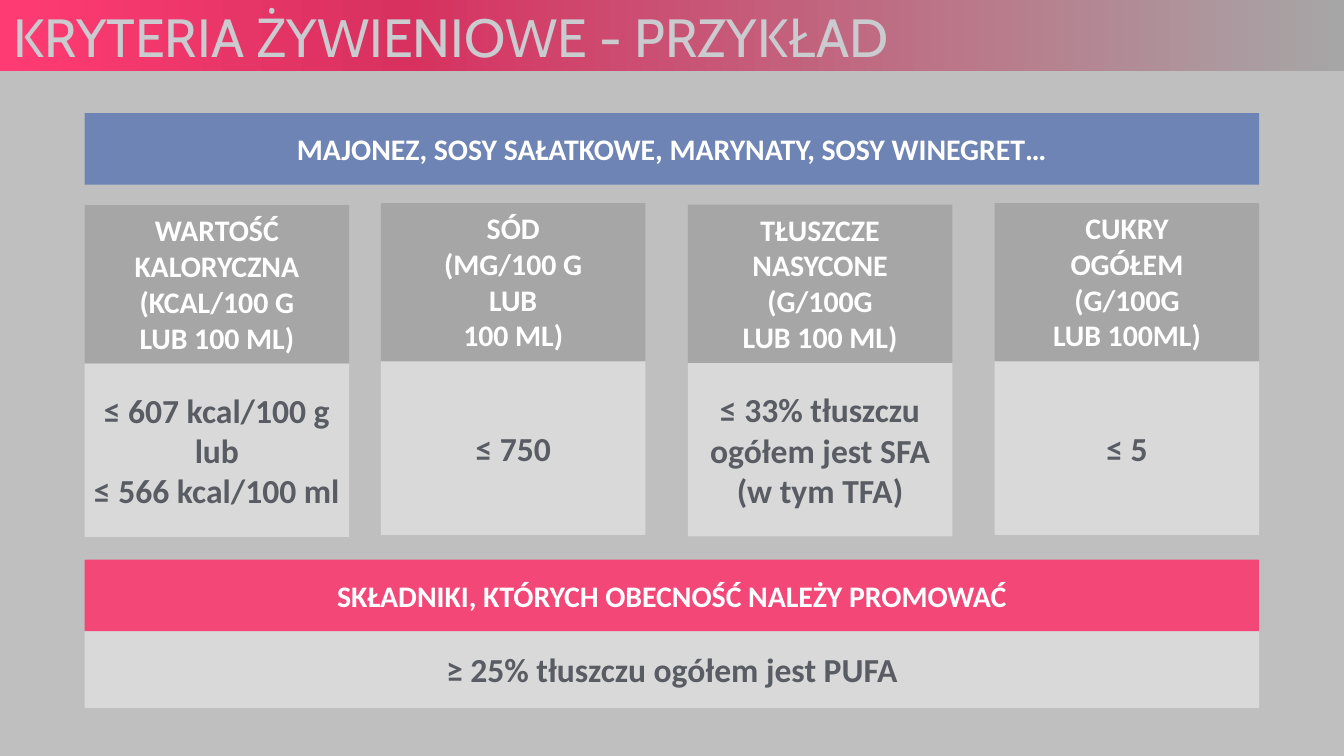
import copy

import pptx
import pptx.dml.color
import pptx.enum.shapes
import pptx.enum.text
import pptx.util

Cm = pptx.util.Cm
RGBColor = pptx.dml.color.RGBColor
Align = pptx.enum.text.PP_ALIGN
Anchor = pptx.enum.text.MSO_ANCHOR

BACKGROUND = RGBColor(0xBF, 0xBF, 0xBF)
GREY = RGBColor(0xA6, 0xA6, 0xA6)
LIGHT_GREY = RGBColor(0xD9, 0xD9, 0xD9)
TITLE_GREY = RGBColor(0xC9, 0xCB, 0xCE)
DARK_GREY = RGBColor(0x59, 0x5D, 0x63)
WHITE = RGBColor(0xFF, 0xFF, 0xFF)
BLUE = RGBColor(0x6E, 0x84, 0xB4)
PINK = RGBColor(0xF3, 0x47, 0x78)
DARK_PINK = RGBColor(0xD8, 0x31, 0x60)
BRIGHT_PINK = RGBColor(0xFF, 0x3B, 0x73)

SLIDE_WIDTH, SLIDE_HEIGHT = Cm(25.4), Cm(14.29)
MARGIN = Cm(1.6)
CONTENT_WIDTH = SLIDE_WIDTH - 2 * MARGIN
BAND_HEIGHT = Cm(1.35)
COLUMN_WIDTH = Cm(5)
HEADER_HEIGHT = Cm(2.99)
COLUMN_HEIGHT = Cm(6.27)

# Left, top, header lines and limit lines of each criterion
CRITERIA = [
    (MARGIN, Cm(3.88),
     ["WARTOŚĆ KALORYCZNA", "(KCAL/100 G", "LUB 100 ML)"],
     ["≤ 607 kcal/100 g", "lub", "≤ 566 kcal/100 ml"]),
    (Cm(7.2), Cm(3.84),
     ["SÓD", "(MG/100 G", "LUB", "100 ML)"],
     ["≤ 750"]),
    (Cm(13), Cm(3.87),
     ["TŁUSZCZE", "NASYCONE", "(G/100G", "LUB 100 ML)"],
     ["≤ 33% tłuszczu", "ogółem jest SFA", "(w tym TFA)"]),
    (Cm(18.8), Cm(3.84),
     ["CUKRY", "OGÓŁEM", "(G/100G", "LUB 100ML)"],
     ["≤ 5"]),
]


def write_text(shape, lines, size=16, color=WHITE, font="Calibri", bold=True,
               align=Align.CENTER, anchor=Anchor.MIDDLE, side_inset=Cm(0.25)):
    """Fill the shape with one paragraph per line."""
    frame = shape.text_frame
    frame.text = "\n".join(lines)
    frame.word_wrap = True
    frame.auto_size = pptx.enum.text.MSO_AUTO_SIZE.NONE
    frame.vertical_anchor = anchor
    frame.margin_left = frame.margin_right = side_inset
    for paragraph in frame.paragraphs:
        paragraph.alignment = align
        paragraph.font.size = pptx.util.Pt(size)
        paragraph.font.name = font
        paragraph.font.bold = bold
        paragraph.font.color.rgb = color


def add_panel(slide, box, fill, lines, **text_format):
    shape = slide.shapes.add_shape(
        pptx.enum.shapes.MSO_SHAPE.RECTANGLE, *box)
    shape.shadow.inherit = False
    shape.fill.solid()
    shape.fill.fore_color.rgb = fill
    shape.line.fill.background()
    write_text(shape, lines, **text_format)


def place_title(slide, box, text):
    title = slide.shapes.title
    title.left, title.top, title.width, title.height = box
    fill = title.fill
    fill.gradient()
    fill.gradient_angle = 180
    first_stop = title._element.spPr.gradFill.gsLst[0]
    first_stop.addnext(copy.deepcopy(first_stop))
    stops = [(0, GREY), (0.7, DARK_PINK), (1, BRIGHT_PINK)]
    for stop, (position, color) in zip(fill.gradient_stops, stops):
        stop.position = position
        stop.color.rgb = color
    write_text(title, [text], size=28.8, color=TITLE_GREY, font="Cabin",
               bold=False, align=Align.LEFT)


def add_criterion(slide, box, header, limit):
    left, top, width, height = box
    add_panel(slide, (left, top + HEADER_HEIGHT, width, height - HEADER_HEIGHT),
              LIGHT_GREY, limit, size=18, color=DARK_GREY, side_inset=Cm(0.1))
    add_panel(slide, (left, top, width, HEADER_HEIGHT), GREY, header,
              anchor=Anchor.TOP)


def add_promoted_ingredients(slide, box, heading, requirement):
    left, top, width, height = box
    add_panel(slide, (left, top + BAND_HEIGHT, width, height - BAND_HEIGHT),
              LIGHT_GREY, [requirement], size=18, color=DARK_GREY)
    add_panel(slide, (left, top, width, BAND_HEIGHT), PINK, [heading])


def main():
    presentation = pptx.Presentation()
    presentation.slide_width = SLIDE_WIDTH
    presentation.slide_height = SLIDE_HEIGHT
    slide = presentation.slides.add_slide(presentation.slide_layouts[5])
    slide.background.fill.solid()
    slide.background.fill.fore_color.rgb = BACKGROUND

    place_title(slide, (0, 0, SLIDE_WIDTH, BAND_HEIGHT),
                "KRYTERIA ŻYWIENIOWE - PRZYKŁAD")
    for left, top, header, limit in CRITERIA:
        add_criterion(slide, (left, top, COLUMN_WIDTH, COLUMN_HEIGHT),
                      header, limit)
    add_promoted_ingredients(
        slide, (MARGIN, Cm(10.58), CONTENT_WIDTH, Cm(2.8)),
        "SKŁADNIKI, KTÓRYCH OBECNOŚĆ NALEŻY PROMOWAĆ",
        "≥ 25% tłuszczu ogółem jest PUFA")
    add_panel(slide, (MARGIN, Cm(2.14), CONTENT_WIDTH, BAND_HEIGHT), BLUE,
              ["MAJONEZ, SOSY SAŁATKOWE, MARYNATY, SOSY WINEGRET…"])

    presentation.save("out.pptx")


if __name__ == "__main__":
    main()
